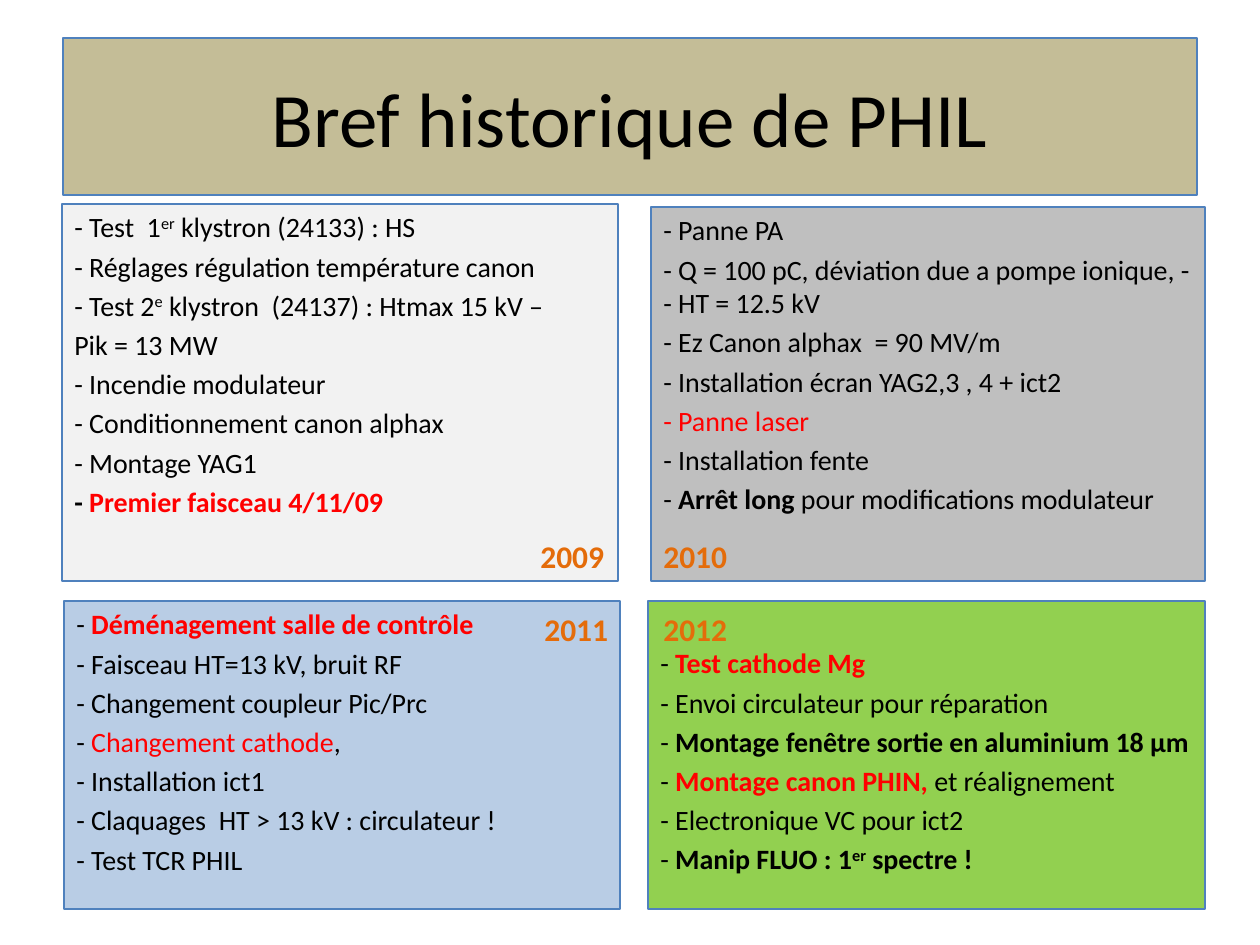
from typing import NamedTuple

from pptx import Presentation
from pptx.dml.color import RGBColor
from pptx.enum.shapes import MSO_SHAPE
from pptx.enum.text import MSO_ANCHOR, MSO_AUTO_SIZE, PP_ALIGN
from pptx.util import Emu, Pt

RECTANGLE = MSO_SHAPE.RECTANGLE
TOP, MIDDLE = MSO_ANCHOR.TOP, MSO_ANCHOR.MIDDLE
LEFT, CENTER = PP_ALIGN.LEFT, PP_ALIGN.CENTER
FIT_SHAPE = MSO_AUTO_SIZE.SHAPE_TO_FIT_TEXT

EMU_PER_PX = 914400 / 126
FONT = "Calibri"
BODY_SIZE = 16
COLORS = {
    "black": "000000", "red": "FF0000", "orange": "E46C0A", "border": "4F81BD",
    "tan": "C4BD97", "light": "F2F2F2", "grey": "BFBFBF",
    "blue": "B9CDE5", "green": "92D050",
}


class Span(NamedTuple):
    text: str
    color: str = "black"
    bold: bool = False
    raised: bool = False


class Area(NamedTuple):
    left: int
    top: int
    width: int
    height: int


class Panel(NamedTuple):
    area: Area
    fill: str
    lines: list[list[Span]]
    top_inset: int = 6


class Year(NamedTuple):
    text: str
    left: int
    top: int


def plain(text: str) -> list[Span]:
    return [Span(text)]


def red(text: str, bold: bool = True) -> Span:
    return Span(text, "red", bold)


def strong(text: str) -> Span:
    return Span(text, bold=True)


DASH = Span("- ")

PANELS = [
    Panel(Area(62, 204, 556, 377), "light", [
        [Span("- Test  1"), Span("er", raised=True), Span(" klystron (24133) : HS")],
        plain("- Réglages régulation température canon"),
        [Span("- Test 2"), Span("e", raised=True),
         Span(" klystron  (24137) : Htmax 15 kV –")],
        plain("Pik = 13 MW"),
        plain("- Incendie modulateur"),
        plain("- Conditionnement canon alphax"),
        plain("- Montage YAG1"),
        [strong("- "), red("Premier faisceau 4/11/09")],
    ]),
    Panel(Area(651, 207, 554, 374), "grey", [
        plain("- Panne PA"),
        plain("- Q = 100 pC, déviation due a pompe ionique, - - HT = 12.5 kV"),
        plain("- Ez Canon alphax  = 90 MV/m"),
        plain("- Installation écran YAG2,3 , 4 + ict2"),
        [red("- Panne laser", bold=False)],
        plain("- Installation fente"),
        [DASH, strong("Arrêt long "), Span("pour modifications modulateur")],
    ]),
    Panel(Area(64, 601, 556, 308), "blue", [
        [DASH, red("Déménagement salle de contrôle")],
        plain("- Faisceau HT=13 kV, bruit RF"),
        plain("- Changement coupleur Pic/Prc"),
        [DASH, red("Changement cathode", bold=False), Span(",")],
        plain("- Installation ict1"),
        plain("- Claquages  HT > 13 kV : circulateur !"),
        plain("- Test TCR PHIL"),
    ]),
    # The deeper inset leaves one line free for the year
    Panel(Area(648, 601, 557, 308), "green", [
        [DASH, red("Test cathode Mg")],
        plain("- Envoi circulateur pour réparation"),
        [DASH, strong("Montage fenêtre sortie en aluminium 18 µm")],
        [DASH, red("Montage canon PHIN, "), Span("et réalignement")],
        plain("- Electronique VC pour ict2"),
        [DASH, strong("Manip FLUO : 1"), Span("er", bold=True, raised=True),
         strong(" spectre !")],
    ], top_inset=45),
]

YEARS = [
    Year("2009", 528, 531),
    Year("2010", 651, 531),
    Year("2011", 532, 604),
    Year("2012", 651, 604),
]


def px(length: int) -> Emu:
    return Emu(round(length * EMU_PER_PX))


def rgb(name: str) -> RGBColor:
    return RGBColor.from_string(COLORS[name])


def format_run(run, size: int, color: str, bold: bool) -> None:
    run.font.name = FONT
    run.font.size = Pt(size)
    run.font.bold = bold
    run.font.color.rgb = rgb(color)


def add_block(page, area: Area, fill: str, anchor: MSO_ANCHOR):
    block = page.shapes.add_shape(RECTANGLE, *map(px, area))
    block.shadow.inherit = False
    block.fill.solid()
    block.fill.fore_color.rgb = rgb(fill)
    block.line.color.rgb = rgb("border")
    block.line.width = Pt(0.75)
    block.text_frame.word_wrap = True
    block.text_frame.vertical_anchor = anchor
    return block


def add_title(page, text: str) -> None:
    frame = add_block(page, Area(63, 38, 1134, 157), "tan", MIDDLE).text_frame
    frame.text = text
    para = frame.paragraphs[0]
    para.alignment = CENTER
    format_run(para.runs[0], 44, "black", False)


def add_panel(page, panel: Panel) -> None:
    frame = add_block(page, panel.area, panel.fill, TOP).text_frame
    frame.margin_top = px(panel.top_inset)
    for index, line in enumerate(panel.lines):
        para = frame.add_paragraph() if index else frame.paragraphs[0]
        para.alignment = LEFT
        para.space_before = Pt(BODY_SIZE * 0.2)
        for span in line:
            run = para.add_run()
            run.text = span.text
            format_run(run, BODY_SIZE, span.color, span.bold)
            if span.raised:
                run._r.get_or_add_rPr().set("baseline", "30000")


def add_year(page, year: Year) -> None:
    box = page.shapes.add_textbox(px(year.left), px(year.top), px(89), px(50))
    frame = box.text_frame
    frame.word_wrap = False
    frame.auto_size = FIT_SHAPE
    frame.text = year.text
    format_run(frame.paragraphs[0].runs[0], 18, "orange", True)


def main() -> None:
    deck = Presentation()
    deck.slide_width, deck.slide_height = px(1260), px(945)
    page = deck.slides.add_slide(deck.slide_layouts[6])

    # Title banner
    add_title(page, "Bref historique de PHIL")

    # One panel per year
    for panel in PANELS:
        add_panel(page, panel)

    # Year labels, over the panels
    for year in YEARS:
        add_year(page, year)

    deck.save("out.pptx")


if __name__ == "__main__":
    main()
